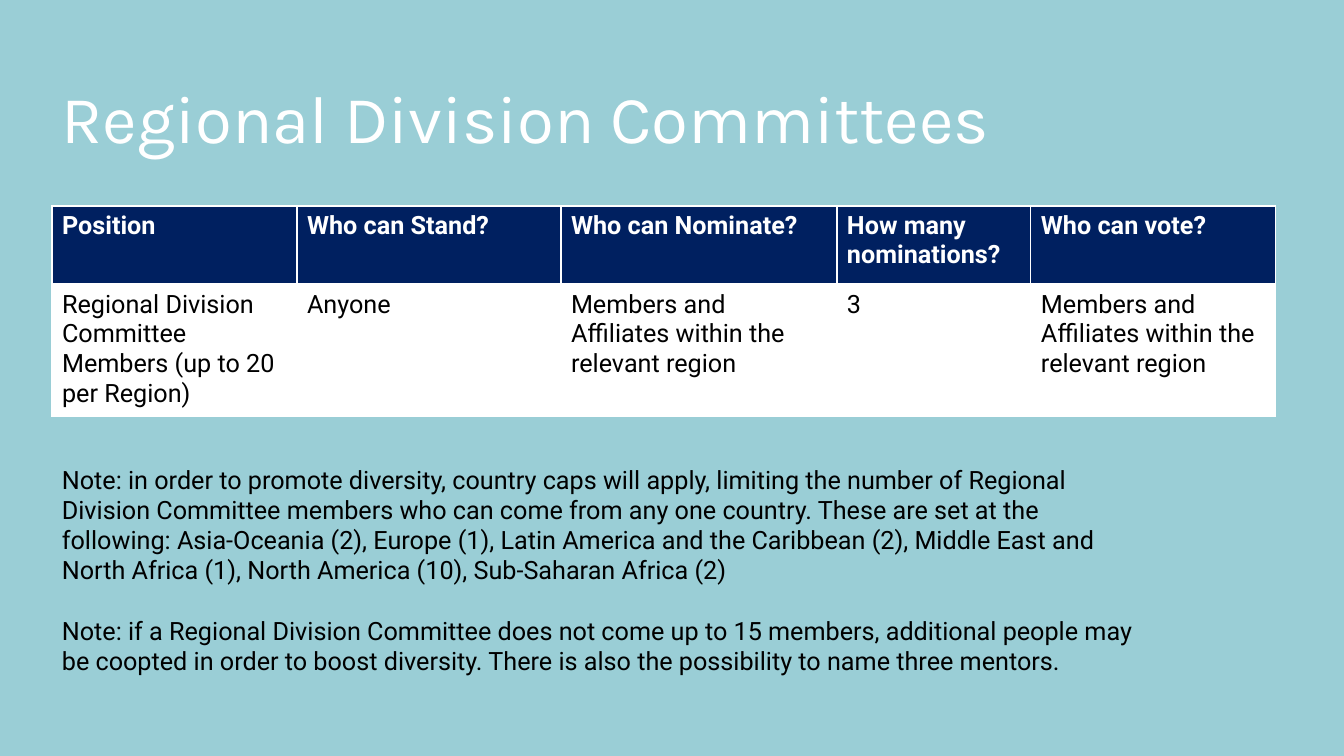
from lxml import etree
from pptx import Presentation
from pptx.dml.color import RGBColor
from pptx.enum.text import MSO_ANCHOR, MSO_AUTO_SIZE
from pptx.oxml.ns import qn
from pptx.util import Pt

MIDDLE, TOP = MSO_ANCHOR.MIDDLE, MSO_ANCHOR.TOP
GROW = MSO_AUTO_SIZE.SHAPE_TO_FIT_TEXT
NO_GROW = MSO_AUTO_SIZE.NONE

TITLE = "Regional Division Committees"
ROWS = [
    ["Position", "Who can Stand?", "Who can Nominate?",
     "How many nominations?", "Who can vote?"],
    ["Regional Division Committee Members (up to 20 per Region)", "Anyone",
     "Members and Affiliates within the relevant region", "3",
     "Members and Affiliates within the relevant region"],
]
NOTES = [
    "Note: in order to promote diversity, country caps will apply, limiting "
    "the number of Regional Division Committee members who can come from any "
    "one country. These are set at the following: Asia-Oceania (2), Europe (1), "
    "Latin America and the Caribbean (2), Middle East and North Africa (1), "
    "North America (10), Sub-Saharan Africa (2)",
    "Note: if a Regional Division Committee does not come up to 15 members, "
    "additional people may be coopted in order to boost diversity. There is "
    "also the possibility to name three mentors.",
]

SKY = RGBColor(0x9A, 0xCE, 0xD6)
NAVY = RGBColor(0x00, 0x20, 0x60)
WHITE = RGBColor(0xFF, 0xFF, 0xFF)
BLACK = RGBColor(0x00, 0x00, 0x00)

PX = 914400 / 100.8
LEFT = 52
COLUMN_WIDTHS = [245, 264, 276, 194, 245]
ROW_HEIGHTS = [79, 131]
NOTE_GAP = Pt(21.6)


def px(length):
    return round(length * PX)


def style(para, font_name, size, color, bold=False):
    for span in para.runs:
        span.font.name = font_name
        span.font.size = Pt(size)
        span.font.color.rgb = color
        span.font.bold = bold


def add_text(page, lines, bounds, font_name, size, color, anchor, fit):
    box = page.shapes.add_textbox(*map(px, bounds))
    frame = box.text_frame
    frame.word_wrap = True
    frame.auto_size = fit
    frame.vertical_anchor = anchor
    frame.text = "\n".join(lines)
    for index, para in enumerate(frame.paragraphs):
        style(para, font_name, size, color)
        if index:
            para.space_before = NOTE_GAP


def set_borders(cell, widths):
    properties = cell._tc.get_or_add_tcPr()
    for index, (side, width) in enumerate(widths.items()):
        line = etree.Element(qn("a:" + side), w=str(Pt(width)))
        fill = etree.SubElement(line, qn("a:solidFill"))
        etree.SubElement(fill, qn("a:srgbClr"), val=str(WHITE))
        properties.insert(index, line)


def add_positions(page):
    table = page.shapes.add_table(
        len(ROWS), len(COLUMN_WIDTHS), px(LEFT), px(206),
        px(sum(COLUMN_WIDTHS)), px(sum(ROW_HEIGHTS))).table
    for column, width in zip(table.columns, COLUMN_WIDTHS):
        column.width = px(width)
    for row_index, (row, height) in enumerate(zip(table.rows, ROW_HEIGHTS)):
        row.height = px(height)
        header = row_index == 0
        for cell, text in zip(row.cells, ROWS[row_index]):
            cell.text = text
            cell.fill.solid()
            cell.fill.fore_color.rgb = NAVY if header else WHITE
            style(cell.text_frame.paragraphs[0], "Roboto", 18,
                  WHITE if header else BLACK, header)
            set_borders(cell, {"lnL": 1, "lnR": 1,
                               "lnT": 1 if header else 3,
                               "lnB": 3 if header else 1})


def main():
    deck = Presentation()
    deck.slide_width, deck.slide_height = px(1344), px(756)
    page = deck.slides.add_slide(deck.slide_layouts[6])
    page.background.fill.solid()
    page.background.fill.fore_color.rgb = SKY
    add_text(page, [TITLE], (LEFT, 57, 1240, 119), "Karla", 48, WHITE, MIDDLE, NO_GROW)
    add_positions(page)
    add_text(page, NOTES, (LEFT, 459, 1105, 254), "Roboto", 18, BLACK, TOP, GROW)
    deck.save("out.pptx")


if __name__ == "__main__":
    main()
